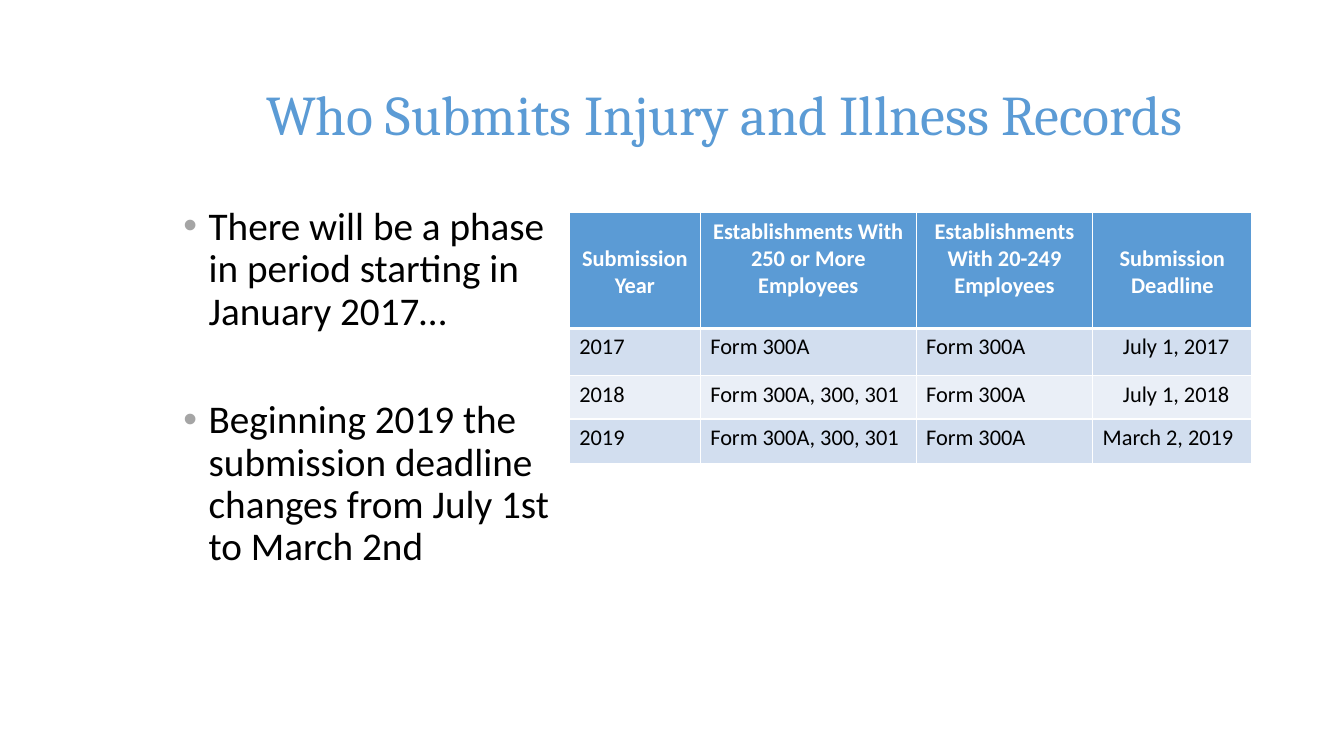
"""Build a slide showing who submits injury and illness records, and when."""
from dataclasses import dataclass

from lxml.etree import SubElement
from pptx import Presentation
from pptx.dml.color import RGBColor
from pptx.enum.text import MSO_ANCHOR as Anchor, PP_ALIGN as Align
from pptx.oxml.ns import qn
from pptx.util import Cm, Pt

BLUE, WHITE, BLACK, GRAY = "5B9BD5", "FFFFFF", "000000", "A5A5A5"
BANDS = ("D2DEEF", "EAEFF7")
ROW_HEIGHTS = (2.92, 1.19, 1.09, 1.12)
HEADER_RULE, THIN_RULE = 3, 1
BULLETS = (
    "There will be a phase in period starting in January 2017…",
    "Beginning 2019 the submission deadline changes from July 1st to March 2nd",
)


@dataclass
class Column:
    header: str
    width: float
    values: tuple
    header_top: float = 0.13
    indents: tuple = (0.25, 0.25, 0.25)


COLUMNS = (
    Column("Submission Year", 3.3, ("2017", "2018", "2019"), 0.81),
    Column("Establishments With 250 or More Employees", 5.44,
           ("Form 300A", "Form 300A, 300, 301", "Form 300A, 300, 301")),
    Column("Establishments With 20-249 Employees", 4.45, ("Form 300A",) * 3),
    Column("Submission Deadline", 4.01,
           ("July 1, 2017", "July 1, 2018", "March 2, 2019"), 0.81, (0.76, 0.76, 0.25)),
)


def rgb(value: str) -> RGBColor:
    return RGBColor.from_string(value)


def style_font(font, name: str, size: float, color: str, bold: bool = False) -> None:
    font.name, font.size, font.bold = name, Pt(size), bold
    font.color.rgb = rgb(color)


def place(sp, left: float, top: float, width: float, height: float) -> None:
    sp.left, sp.top, sp.width, sp.height = Cm(left), Cm(top), Cm(width), Cm(height)


def add_title(s, text: str) -> None:
    sp = s.shapes.title
    place(sp, 6.45, 1.02, 25.1, 3.68)
    tf = sp.text_frame
    tf.text = text
    tf.vertical_anchor = Anchor.MIDDLE
    p = tf.paragraphs[0]
    p.alignment = Align.LEFT
    style_font(p.runs[0].font, "Cambria", 40, BLUE)


def add_bullet(p) -> None:
    pPr = p._p.get_or_add_pPr()
    pPr.set("marL", str(Cm(0.64)))
    pPr.set("indent", str(Cm(-0.64)))
    color = SubElement(pPr, qn("a:buClr"))
    SubElement(color, qn("a:srgbClr"), val=GRAY)
    SubElement(pPr, qn("a:buFont"), typeface="Arial")
    SubElement(pPr, qn("a:buChar"), char="•")


def add_bullets(s, texts: tuple) -> None:
    tf = s.shapes.add_textbox(Cm(4.37), Cm(5.08), Cm(9.98), Cm(12.09)).text_frame
    tf.word_wrap = True
    for i, text in enumerate(texts):
        p = tf.add_paragraph() if i else tf.paragraphs[0]
        p.text = text
        add_bullet(p)
        p.line_spacing = 0.9
        p.space_before = Pt(47.5 if i else 0)
        style_font(p.runs[0].font, "Calibri", 28, BLACK)


def set_borders(cell, top: float, bottom: float) -> None:
    tcPr = cell._tc.get_or_add_tcPr()
    widths = {"a:lnL": THIN_RULE, "a:lnR": THIN_RULE, "a:lnT": top, "a:lnB": bottom}
    for tag, width in widths.items():
        line = SubElement(tcPr, qn(tag), w=str(Pt(width)))
        fill = SubElement(line, qn("a:solidFill"))
        SubElement(fill, qn("a:srgbClr"), val=WHITE)


def fill_cell(cell, text: str, row: int, column: Column) -> None:
    header = row == 0
    cell.text = text
    set_borders(cell, HEADER_RULE if row == 1 else THIN_RULE,
                HEADER_RULE if header else THIN_RULE)
    cell.fill.solid()
    cell.fill.fore_color.rgb = rgb(BLUE if header else BANDS[(row - 1) % 2])
    cell.vertical_anchor = Anchor.TOP
    p = cell.text_frame.paragraphs[0]
    if header:
        cell.margin_top = Cm(column.header_top)
        p.alignment = Align.CENTER
    else:
        cell.margin_left = Cm(column.indents[row - 1])
        p.alignment = Align.LEFT
    style_font(p.runs[0].font, "Calibri", 16, WHITE if header else BLACK, header)


def add_schedule(s, columns: tuple) -> None:
    width = sum(column.width for column in columns)
    table = s.shapes.add_table(len(ROW_HEIGHTS), len(columns), Cm(14.35), Cm(5.36),
                               Cm(width), Cm(sum(ROW_HEIGHTS))).table
    for row, height in zip(table.rows, ROW_HEIGHTS):
        row.height = Cm(height)
    for c, column in enumerate(columns):
        table.columns[c].width = Cm(column.width)
        for r, text in enumerate((column.header, *column.values)):
            fill_cell(table.cell(r, c), text, r, column)


def main() -> None:
    prs = Presentation()
    prs.slide_width, prs.slide_height = Cm(33.87), Cm(19.05)
    s = prs.slides.add_slide(prs.slide_layouts[5])
    add_title(s, "Who Submits Injury and Illness Records")
    add_schedule(s, COLUMNS)
    add_bullets(s, BULLETS)
    prs.save("out.pptx")


if __name__ == "__main__":
    main()
